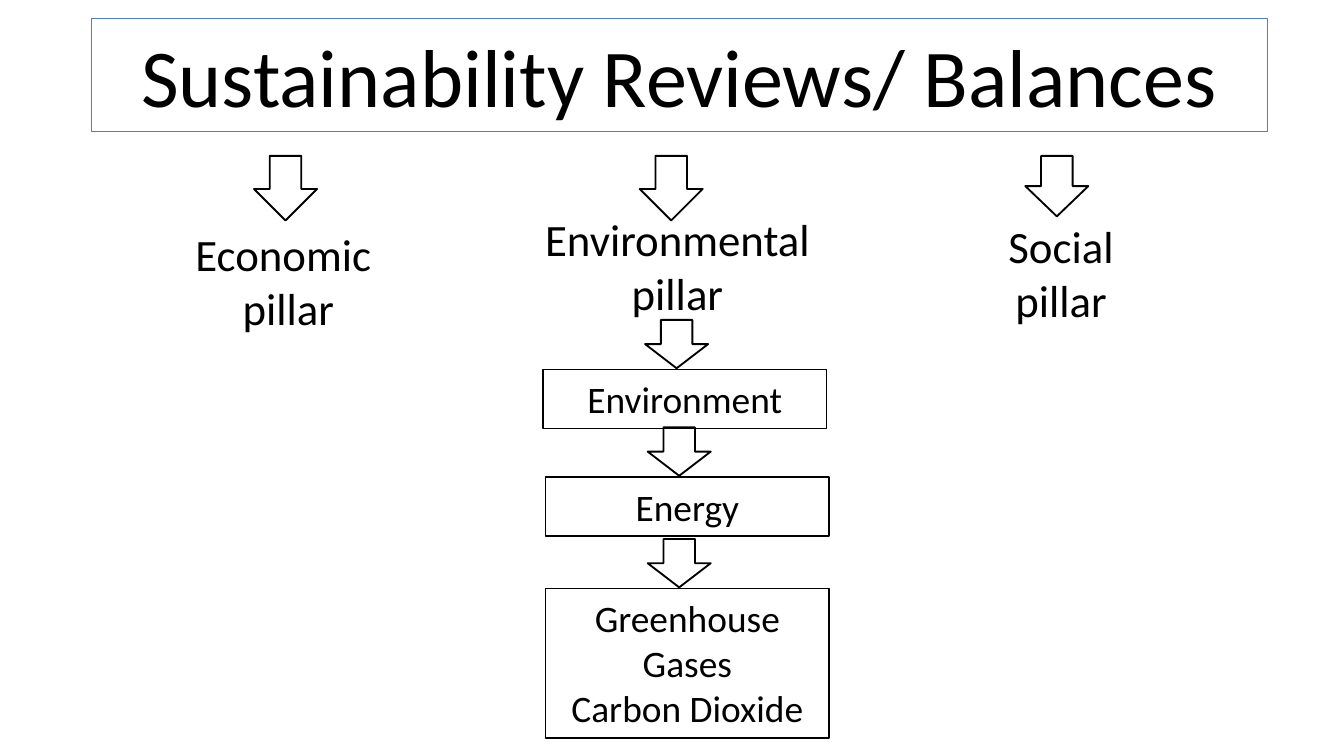
import pptx
import pptx.util
import pptx.dml.color
import pptx.enum.shapes
import pptx.enum.text

Pt = pptx.util.Pt
SHAPES = pptx.enum.shapes.MSO_SHAPE
BLACK = pptx.dml.color.RGBColor(0x00, 0x00, 0x00)
BLUE = pptx.dml.color.RGBColor(0x4F, 0x81, 0xBD)
FONT = "Calibri"
ARROW_WIDTH = 33.8
ARROW_TOP = 83.5
ARROW_PITCH = 206.6


def write_lines(frame, lines, size):
    frame.word_wrap = True
    frame.vertical_anchor = pptx.enum.text.MSO_ANCHOR.TOP
    for index, line in enumerate(lines):
        paragraph = frame.add_paragraph() if index else frame.paragraphs[0]
        paragraph.alignment = pptx.enum.text.PP_ALIGN.CENTER
        run = paragraph.add_run()
        run.text = line
        run.font.name = FONT
        run.font.size = Pt(size)
        run.font.color.rgb = BLACK


def add_outline(slide, kind, box, color, weight):
    outline = slide.shapes.add_shape(kind, *map(Pt, box))
    outline.shadow.inherit = False
    outline.fill.background()
    outline.line.color.rgb = color
    outline.line.width = Pt(weight)
    return outline


def add_framed_text(slide, box, lines, size, color=BLACK):
    frame = add_outline(slide, SHAPES.RECTANGLE, box, color, 0.75)
    write_lines(frame.text_frame, lines, size)


def add_down_arrow(slide, left, top, height):
    add_outline(slide, SHAPES.DOWN_ARROW, (left, top, ARROW_WIDTH, height), BLACK, 1)


def add_pillar(slide, box, lines, arrow_left, arrow_height):
    label = slide.shapes.add_textbox(*map(Pt, box))
    write_lines(label.text_frame, lines, 24)
    add_down_arrow(slide, arrow_left, ARROW_TOP, arrow_height)


def add_chain_step(slide, box, lines):
    left, top = box[:2]
    add_framed_text(slide, box, lines, 20)
    add_down_arrow(slide, left + 54.7, top - 26.6, 25.9)


def main():
    presentation = pptx.Presentation()
    presentation.slide_width = Pt(720)
    presentation.slide_height = Pt(405)
    slide = presentation.slides.add_slide(presentation.slide_layouts[6])

    add_framed_text(slide, (49, 10.1, 630, 60.5),
                    ["Sustainability Reviews/ Balances"], 44, BLUE)

    pillars = [
        ((67.7, 118.1, 173.5, 65.5), ["Economic ", "pillar"], 34.6),
        ((283, 109.8, 159.8, 65.5), ["Environmental pillar"], 34.6),
        ((523.4, 113.8, 90, 65.5), ["Social pillar"], 32.4),
    ]
    for index, (box, lines, arrow_height) in enumerate(pillars):
        add_pillar(slide, box, lines, 136.1 + index * ARROW_PITCH, arrow_height)

    chain = [
        ((290.9, 198, 151.9, 31.5), ["Environment"]),
        ((292.3, 255.6, 151.9, 31.5), ["Energy"]),
        ((292.3, 315.4, 151.9, 79.9), ["Greenhouse Gases", "Carbon Dioxide"]),
    ]
    for box, lines in chain:
        add_chain_step(slide, box, lines)

    presentation.save("out.pptx")


if __name__ == "__main__":
    main()
